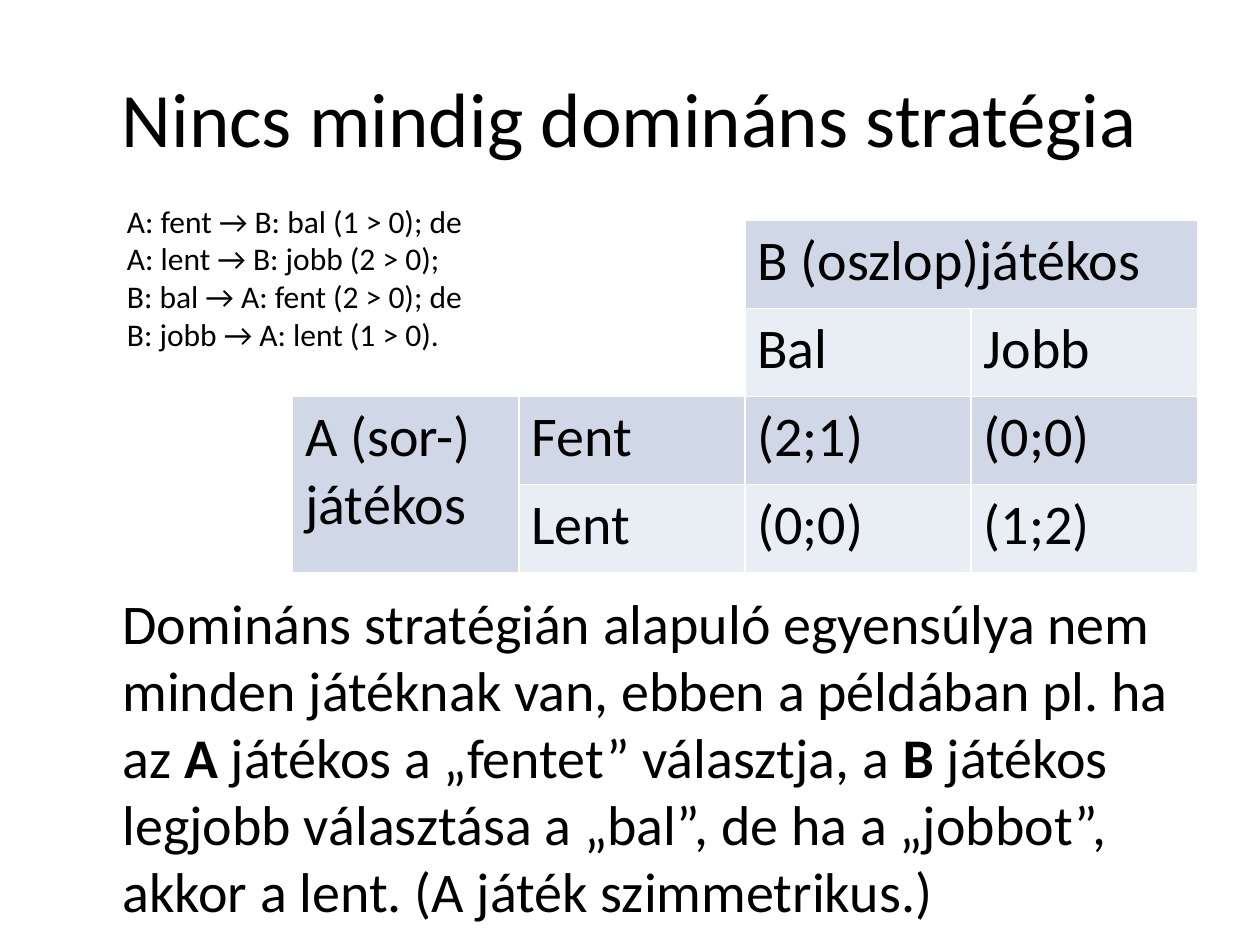
from lxml import etree
from pptx import Presentation
from pptx import util as u
from pptx.dml.color import RGBColor
from pptx.enum import text
from pptx.oxml.ns import qn


def colour(value):
    return RGBColor.from_string(value)


class SlideBuilder:
    font_name = "Calibri"
    ink = "000000"
    border = "FFFFFF"
    bands = ("D0D8E8", "E9EDF4")

    def __init__(self, slide):
        self.slide = slide

    def style(self, paragraph, size):
        paragraph.font.name = self.font_name
        paragraph.font.size = u.Pt(size)
        paragraph.font.color.rgb = colour(self.ink)

    def text_box(self, box, paragraphs, size, align=text.PP_ALIGN.LEFT,
                 anchor=text.MSO_ANCHOR.TOP, margin_left=0.25):
        """Each paragraph is a list of (words, bold) runs."""
        shape = self.slide.shapes.add_textbox(*map(u.Cm, box))
        frame = shape.text_frame
        frame.word_wrap = True
        frame.vertical_anchor = anchor
        frame.margin_left = u.Cm(margin_left)
        for index, runs in enumerate(paragraphs):
            paragraph = frame.add_paragraph() if index else frame.paragraphs[0]
            paragraph.alignment = align
            self.style(paragraph, size)
            for words, bold in runs:
                run = paragraph.add_run()
                run.text = words
                if bold:
                    run.font.bold = True

    def cell_borders(self, cell):
        properties = cell._tc.get_or_add_tcPr()
        for side in ("a:lnL", "a:lnR", "a:lnT", "a:lnB"):
            line = etree.SubElement(properties, qn(side), w=str(u.Pt(1)))
            fill = etree.SubElement(line, qn("a:solidFill"))
            etree.SubElement(fill, qn("a:srgbClr"), val=self.border)

    def table(self, box, rows, merges, size):
        shape = self.slide.shapes.add_table(
            len(rows), len(rows[0]), *map(u.Cm, box))
        table = shape.table
        table.first_row = table.horz_banding = False
        for row_index, row in enumerate(rows):
            for column_index, words in enumerate(row):
                cell = table.cell(row_index, column_index)
                self.cell_borders(cell)
                if words is None:
                    cell.fill.background()
                else:
                    cell.fill.solid()
                    cell.fill.fore_color.rgb = colour(self.bands[row_index % 2])
                    cell.text = words
                self.style(cell.text_frame.paragraphs[0], size)
        for first, last in merges:
            table.cell(*first).merge(table.cell(*last))


def main():
    presentation = Presentation()
    presentation.slide_width = u.Cm(25.4)
    presentation.slide_height = u.Cm(19.05)
    builder = SlideBuilder(
        presentation.slides.add_slide(presentation.slide_layouts[6]))

    # Title
    builder.text_box((1.27, 0.76, 22.86, 3.18),
                     [[("Nincs mindig domináns stratégia", False)]], 44,
                     text.PP_ALIGN.CENTER, text.MSO_ANCHOR.MIDDLE)

    # Explanation below the table
    builder.text_box((1.27, 11.73, 22.86, 6.81), [[
        ("Domináns stratégián alapuló egyensúlya nem minden játéknak van, "
         "ebben a példában pl. ha az ", False),
        ("A", True),
        (" játékos a „fentet” választja, a ", False),
        ("B", True),
        (" játékos legjobb választása a „bal”, de ha a „jobbot”, "
         "akkor a lent. (A játék szimmetrikus.)", False),
    ]], 32, margin_left=1.2)

    # Payoff matrix
    builder.table(
        (5.9, 4.45, 18.24, 7.09),
        [[None, None, "B (oszlop)játékos", ""],
         [None, None, "Bal", "Jobb"],
         ["A (sor-) játékos", "Fent", "(2;1)", "(0;0)"],
         ["", "Lent", "(0;0)", "(1;2)"]],
        [((0, 0), (1, 1)), ((0, 2), (0, 3)), ((2, 0), (3, 0))], 32)

    # Best responses
    responses = ["A: fent → B: bal (1 > 0); de",
                 "A: lent → B: jobb (2 > 0);",
                 "B: bal → A: fent (2 > 0); de",
                 "B: jobb → A: lent (1 > 0)."]
    builder.text_box((2.31, 3.94, 10.59, 3.33),
                     [[(line, False)] for line in responses], 18)

    presentation.save("out.pptx")


if __name__ == "__main__":
    main()
